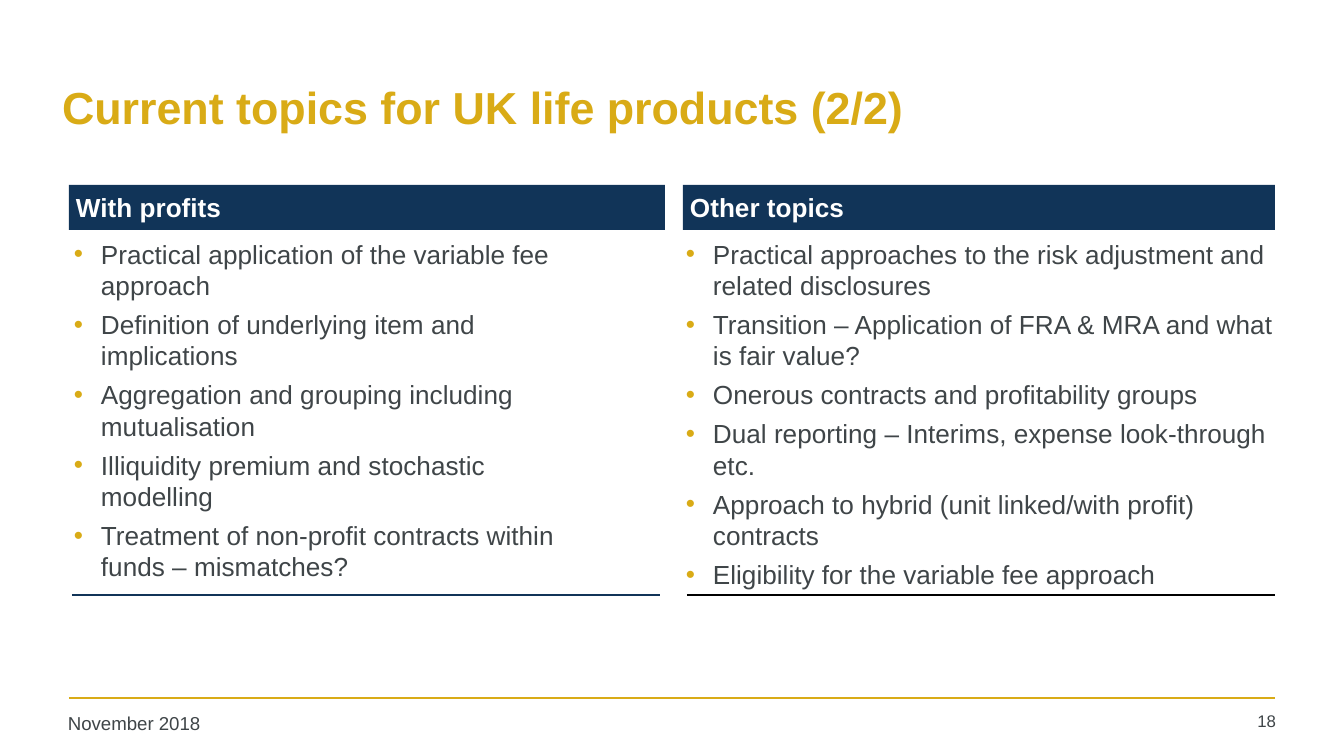
"""Build the slide on current topics for UK life products."""
from lxml import etree
from pptx import Presentation
from pptx import util as u
from pptx.dml.color import RGBColor
from pptx.enum import shapes, text
from pptx.oxml import ns

PX = 914400 / 134.4
GOLD, NAVY, GREY = "D9AB16", "113458", "3F4548"


def px(*lengths):
    return [u.Emu(round(length * PX)) for length in lengths]


def style(paragraph, size, color, bold=False):
    font = paragraph.font
    font.name, font.size, font.bold = "Arial", u.Pt(size), bold
    font.color.rgb = RGBColor.from_string(color)


prs = Presentation()
prs.slide_width, prs.slide_height = px(1344, 756)
slide = prs.slides.add_slide(prs.slide_layouts[5])

title = slide.shapes.title
title.left, title.top, title.width, title.height = px(52, 44, 1219, 126)
frame = title.text_frame
frame.text = "Current topics for UK life products (2/2)"
frame.vertical_anchor = text.MSO_ANCHOR.MIDDLE
frame.margin_left, frame.margin_top, frame.margin_right, frame.margin_bottom = px(10, 5, 10, 5)
frame.paragraphs[0].alignment = text.PP_ALIGN.LEFT
style(frame.paragraphs[0], 24, GOLD, True)

footers = [
    ("November 2018", (58, 707, 296, 36), 10, text.PP_ALIGN.LEFT),
    ("18", (1191, 706, 95, 38), 9, text.PP_ALIGN.RIGHT),
]
for wording, place, size, alignment in footers:
    frame = slide.shapes.add_textbox(*px(*place)).text_frame
    frame.word_wrap = True
    frame.margin_left, frame.margin_top, frame.margin_right, frame.margin_bottom = px(10, 5, 10, 5)
    frame.text = wording
    frame.paragraphs[0].alignment = alignment
    style(frame.paragraphs[0], size, GREY)

columns = [
    ("With profits", (69, 596), (74, 501), [
        "Practical application of the variable fee approach",
        "Definition of underlying item and implications",
        "Aggregation and grouping including mutualisation",
        "Illiquidity premium and stochastic modelling",
        "Treatment of non-profit contracts within funds – mismatches?",
    ]),
    ("Other topics", (683, 592), (686, 590), [
        "Practical approaches to the risk adjustment and related disclosures",
        "Transition – Application of FRA & MRA and what is fair value?",
        "Onerous contracts and profitability groups",
        "Dual reporting – Interims, expense look-through etc.",
        "Approach to hybrid (unit linked/with profit) contracts",
        "Eligibility for the variable fee approach",
    ]),
]
for heading, (head_left, head_width), (list_left, list_width), topics in columns:
    header = slide.shapes.add_shape(
        shapes.MSO_SHAPE.RECTANGLE, *px(head_left, 185, head_width, 45))
    header.shadow.inherit = False
    header.fill.solid()
    header.fill.fore_color.rgb = RGBColor.from_string(NAVY)
    header.line.fill.background()
    frame = header.text_frame
    frame.margin_left, frame.margin_top, frame.margin_right, frame.margin_bottom = px(7, 7, 7, 7)
    frame.vertical_anchor = text.MSO_ANCHOR.MIDDLE
    frame.text = heading
    frame.paragraphs[0].alignment = text.PP_ALIGN.LEFT
    style(frame.paragraphs[0], 14, "FFFFFF", True)

    frame = slide.shapes.add_textbox(*px(list_left, 238, list_width, 347)).text_frame
    frame.word_wrap = True
    frame.margin_left = frame.margin_top = frame.margin_right = frame.margin_bottom = 0
    frame.text = "\n".join(topics)
    for topic in frame.paragraphs:
        topic.line_spacing = u.Pt(16.8)
        topic.space_after = u.Pt(4.1)
        properties = topic._p.get_or_add_pPr()
        indent = px(27)[0]
        properties.set("marL", str(indent))
        properties.set("indent", str(-indent))
        bullet_color = etree.SubElement(properties, ns.qn("a:buClr"))
        etree.SubElement(bullet_color, ns.qn("a:srgbClr"), val=GOLD)
        etree.SubElement(properties, ns.qn("a:buFont"), typeface="Arial")
        etree.SubElement(properties, ns.qn("a:buChar"), char="•")
        style(topic, 14, GREY)

rules = [
    (69, 1275, 698, GOLD, 1),
    (72, 660, 595, NAVY, 0.75),
    (687, 1275, 595, "000000", 0.75),
]
for start, end, height, color, weight in rules:
    rule = slide.shapes.add_connector(
        shapes.MSO_CONNECTOR.STRAIGHT, *px(start, height, end, height))
    rule.line.color.rgb = RGBColor.from_string(color)
    rule.line.width = u.Pt(weight)
    etree.SubElement(rule._element.spPr, ns.qn("a:effectLst"))

prs.save("out.pptx")
